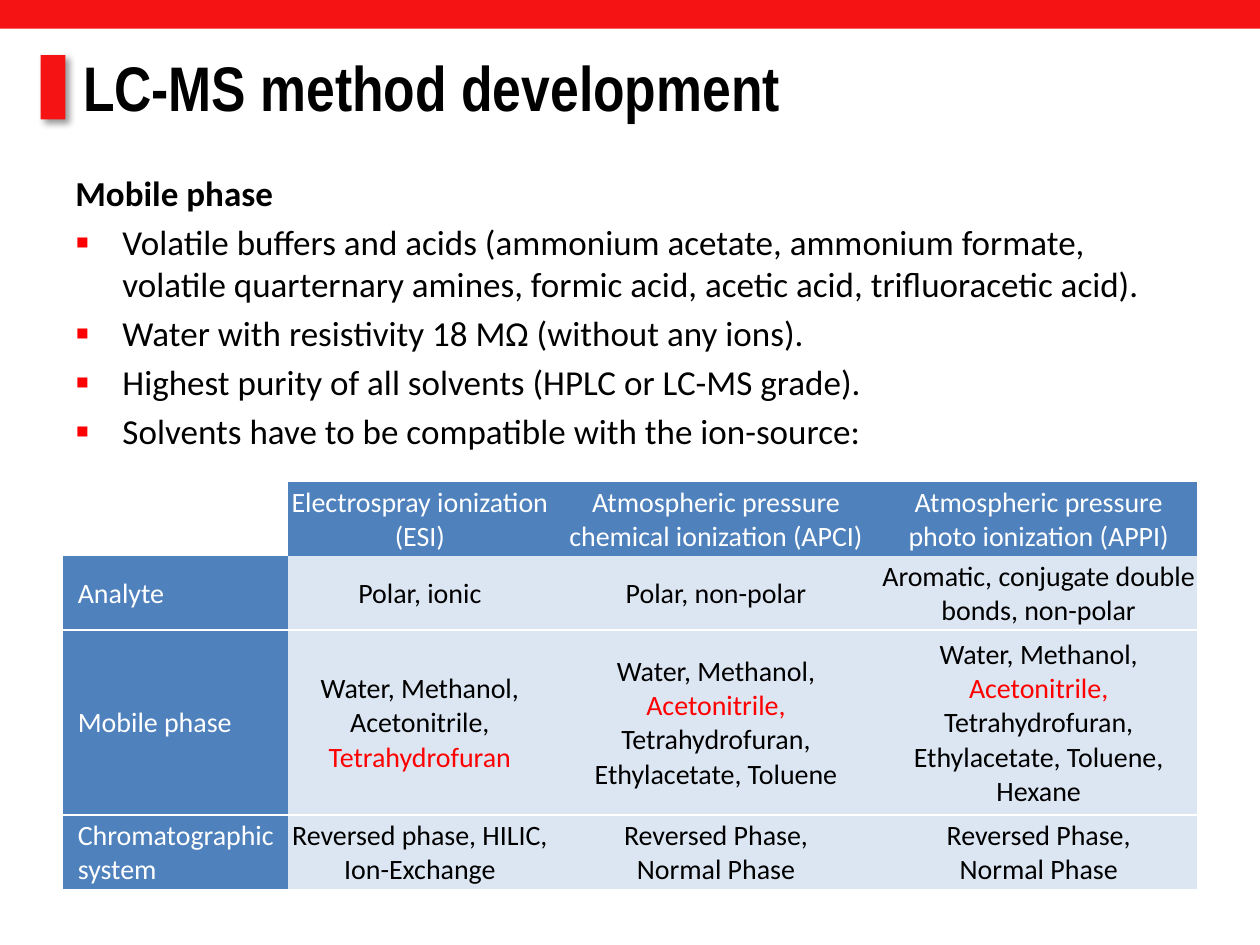
from lxml import etree
from pptx import Presentation
from pptx import util as u
from pptx.dml.color import RGBColor
from pptx.enum import shapes, text
from pptx.oxml.ns import qn

COLORS = {"accent": "F51313", "red": "FF0000", "black": "000000", "white": "FFFFFF",
          "header": "4F81BD", "cell": "DCE6F2"}
BODY_FONT = "Calibri"
NO_GRID_STYLE = "{2D5ABB26-0587-4C30-8999-92F81FD0307C}"

TITLE = "LC-MS method development"
HEADING = "Mobile phase"
POINTS = [
    "Volatile buffers and acids (ammonium acetate, ammonium formate, volatile quarternary "
    "amines, formic acid, acetic acid, trifluoracetic acid).",
    "Water with resistivity 18 MΩ (without any ions).",
    "Highest purity of all solvents (HPLC or LC-MS grade).",
    "Solvents have to be compatible with the ion-source:",
]

COL_WIDTHS = [4.54, 5.31, 6.63, 6.38]
ROW_HEIGHTS = [1.49, 1.49, 3.73, 1.49]
REVERSED_NORMAL = [[("Reversed Phase,", "black")], [("Normal Phase", "black")]]


def plain(words, color="black"):
    return [[(words, color)]]


SOURCES = [
    [[], plain("Electrospray ionization (ESI)", "white"),
     plain("Atmospheric pressure chemical ionization (APCI)", "white"),
     plain("Atmospheric pressure photo ionization (APPI)", "white")],
    [plain("Analyte", "white"), plain("Polar, ionic"), plain("Polar, non-polar"),
     plain("Aromatic, conjugate double bonds, non-polar")],
    [plain("Mobile phase", "white"),
     [[("Water, Methanol, Acetonitrile, ", "black"), ("Tetrahydrofuran", "red")]],
     [[("Water, Methanol, ", "black"), ("Acetonitrile, ", "red"),
       ("Tetrahydrofuran, Ethylacetate, Toluene", "black")]],
     [[("Water, Methanol, ", "black"), ("Acetonitrile, ", "red"),
       ("Tetrahydrofuran, Ethylacetate, Toluene, Hexane", "black")]]],
    [plain("Chromatographic system", "white"),
     plain("Reversed phase, HILIC, Ion-Exchange"), REVERSED_NORMAL, REVERSED_NORMAL],
]


def rgb(name):
    return RGBColor.from_string(COLORS[name])


def add_run(paragraph, words, size, color, font=BODY_FONT, bold=False):
    run = paragraph.add_run()
    run.text = words
    run.font.size, run.font.name, run.font.bold = u.Pt(size), font, bold
    run.font.color.rgb = rgb(color)


def child(parent, tag, **attributes):
    return etree.SubElement(parent, qn(tag), attributes)


def add_bar(slide, left, top, width, height):
    bar = slide.shapes.add_shape(shapes.MSO_SHAPE.RECTANGLE,
                                 *map(u.Cm, (left, top, width, height)))
    bar.shadow.inherit = False
    bar.fill.solid()
    bar.fill.fore_color.rgb = rgb("accent")
    bar.line.fill.background()
    return bar


def add_shadow(bar):
    effects = bar._element.spPr.find(qn("a:effectLst"))
    shadow = child(effects, "a:outerShdw", blurRad=str(u.Pt(4)), dist=str(u.Pt(3)),
                   dir="2700000", algn="tl", rotWithShape="0")
    child(child(shadow, "a:srgbClr", val=COLORS["black"]), "a:alpha", val="40000")


def add_bullet(paragraph):
    props = paragraph._p.get_or_add_pPr()
    indent = u.Cm(0.95)
    props.set("marL", str(indent))
    props.set("indent", str(-indent))
    child(child(props, "a:buClr"), "a:srgbClr", val=COLORS["red"])
    child(props, "a:buSzPct", val="115000")
    child(props, "a:buFont", typeface="Arial")
    child(props, "a:buChar", char="▪")


def add_border(cell, side):
    line = child(cell._tc.get_or_add_tcPr(), side, w=str(u.Pt(1)))
    child(child(line, "a:solidFill"), "a:srgbClr", val=COLORS["white"])


def add_title(slide):
    title = slide.shapes.title
    title.left, title.top, title.width, title.height = map(u.Cm, (1.42, 0.84, 23.11, 1.8))
    frame = title.text_frame
    frame.vertical_anchor = text.MSO_ANCHOR.MIDDLE
    frame.auto_size = text.MSO_AUTO_SIZE.SHAPE_TO_FIT_TEXT
    frame.paragraphs[0].alignment = text.PP_ALIGN.LEFT
    add_run(frame.paragraphs[0], TITLE, 36, "black", "Arial Narrow", True)


def add_points(slide):
    frame = slide.shapes.add_textbox(*map(u.Cm, (1.27, 3.33, 22.86, 6.4))).text_frame
    frame.word_wrap = True
    add_run(frame.paragraphs[0], HEADING, 20, "black", bold=True)
    for point in POINTS:
        paragraph = frame.add_paragraph()
        paragraph.space_before = u.Pt(4)
        add_bullet(paragraph)
        add_run(paragraph, point, 20, "black")


def fill_cell(cell, paragraphs, row, col):
    cell.vertical_anchor = text.MSO_ANCHOR.MIDDLE
    cell.margin_left = u.Cm(0.03 if col else 0.3)
    cell.margin_top = cell.margin_right = u.Cm(0.03)
    cell.margin_bottom = 0
    if row > 1:
        add_border(cell, "a:lnT")
    if 0 < row < len(SOURCES) - 1:
        add_border(cell, "a:lnB")
    if not paragraphs:
        cell.fill.background()
        return
    cell.fill.solid()
    cell.fill.fore_color.rgb = rgb("cell" if row and col else "header")
    frame = cell.text_frame
    for i, runs in enumerate(paragraphs):
        paragraph = frame.add_paragraph() if i else frame.paragraphs[0]
        paragraph.alignment = text.PP_ALIGN.CENTER if col else text.PP_ALIGN.LEFT
        for words, color in runs:
            add_run(paragraph, words, 16, color)


def add_sources(slide):
    table = slide.shapes.add_table(
        len(ROW_HEIGHTS), len(COL_WIDTHS), u.Cm(1.27), u.Cm(9.72),
        u.Cm(sum(COL_WIDTHS)), u.Cm(sum(ROW_HEIGHTS))).table
    table.first_row = table.horz_banding = False
    table._tbl.tblPr.find(qn("a:tableStyleId")).text = NO_GRID_STYLE
    for column, width in zip(table.columns, COL_WIDTHS):
        column.width = u.Cm(width)
    for r, height in enumerate(ROW_HEIGHTS):
        table.rows[r].height = u.Cm(height)
        for c, paragraphs in enumerate(SOURCES[r]):
            fill_cell(table.cell(r, c), paragraphs, r, c)


def main():
    deck = Presentation()
    deck.slide_width, deck.slide_height = u.Cm(25.4), u.Cm(19.05)
    slide = deck.slides.add_slide(deck.slide_layouts[5])
    add_shadow(add_bar(slide, 0.82, 1.11, 0.5, 1.3))
    add_bar(slide, 0, 0, 25.4, 0.58)
    add_title(slide)
    add_points(slide)
    add_sources(slide)
    deck.save("out.pptx")


if __name__ == "__main__":
    main()
